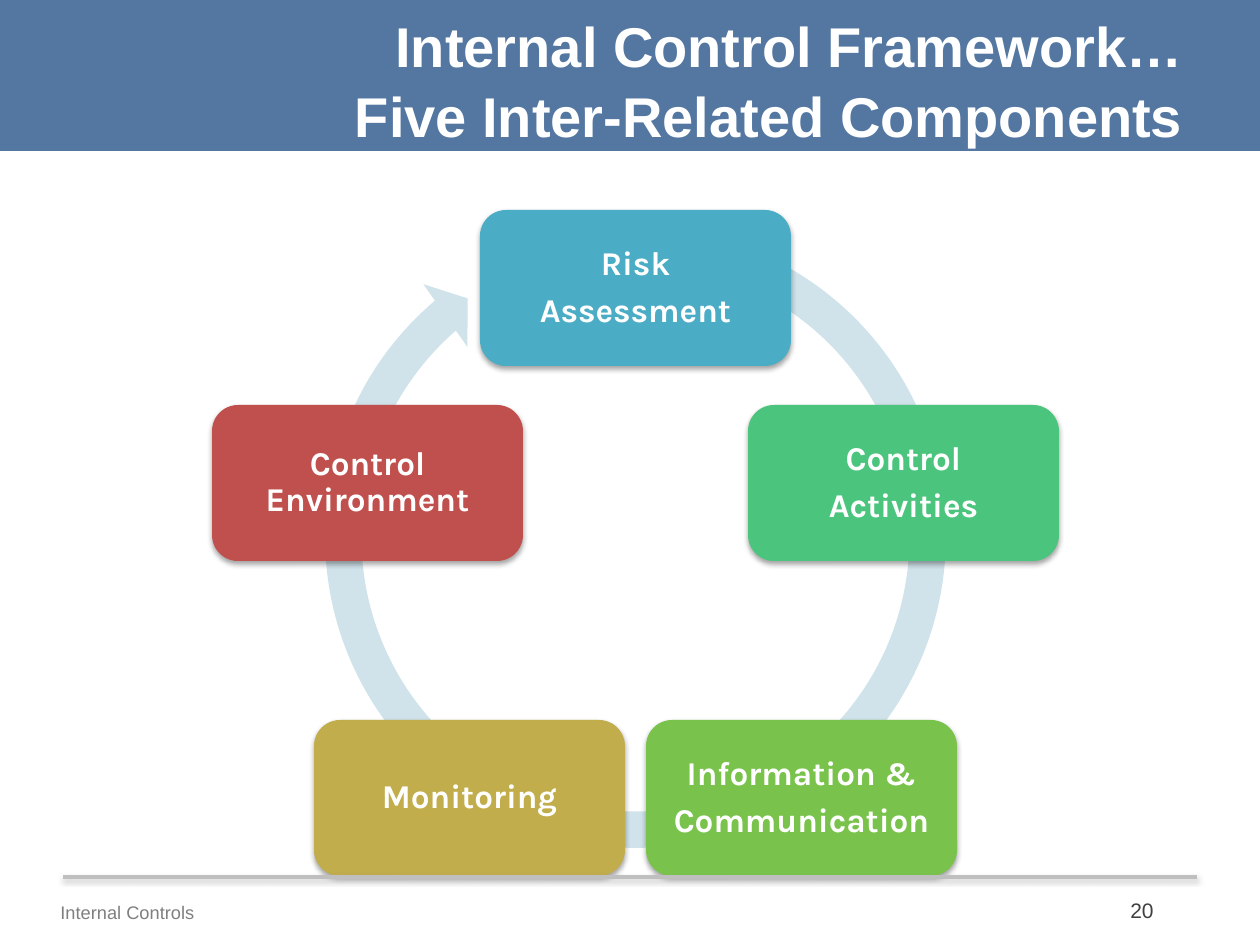
"""Build the slide on the five inter-related components of internal control."""
import dataclasses
import math
import typing

import lxml.etree
import pptx
import pptx.dml.color
import pptx.enum.shapes
import pptx.enum.text
import pptx.oxml.ns
import pptx.util

RGB = pptx.dml.color.RGBColor
SHAPE = pptx.enum.shapes.MSO_SHAPE
ALIGN = pptx.enum.text.PP_ALIGN
ANCHOR = pptx.enum.text.MSO_ANCHOR
qn = pptx.oxml.ns.qn

WHITE = RGB(0xFF, 0xFF, 0xFF)
BLACK = RGB(0x00, 0x00, 0x00)
NAVY = RGB(0x37, 0x60, 0x92)
PALE_BLUE = RGB(0xD0, 0xE3, 0xEA)
TEAL = RGB(0x4B, 0xAC, 0xC6)
MINT = RGB(0x4B, 0xC5, 0x7E)
GREEN = RGB(0x79, 0xC3, 0x4C)
GOLD = RGB(0xC2, 0xAD, 0x4C)
RED = RGB(0xC0, 0x50, 0x4D)
RULE_GREY = RGB(0xBF, 0xBF, 0xBF)
SHADOW_GREY = RGB(0x80, 0x80, 0x80)
NUMBER_GREY = RGB(0x40, 0x40, 0x40)
FOOTER_GREY = RGB(0x7F, 0x7F, 0x7F)

EMU_PER_PX = 914400 / 126
CENTRE_X, CENTRE_Y, RADIUS = 635, 570, 282
BOX_W, BOX_H = 311, 156
ARROW_ADJUSTMENTS = (0.055, 3.307, 137.652, 173.925, 0.058)


@dataclasses.dataclass
class Component:
    lines: tuple[str, ...]
    color: RGB


@dataclasses.dataclass
class Label:
    text: str
    box: tuple[int, int, int, int]
    color: RGB
    font: dict[str, typing.Any]
    paragraph: dict[str, typing.Any] = dataclasses.field(default_factory=dict)
    frame: dict[str, typing.Any] = dataclasses.field(default_factory=dict)


COMPONENTS = (
    Component(("Risk", "Assessment"), TEAL),
    Component(("Control", "Activities"), MINT),
    Component(("Information &", "Communication"), GREEN),
    Component(("Monitoring",), GOLD),
    Component(("Control Environment",), RED),
)


def px(value: float) -> int:
    return round(value * EMU_PER_PX)


def apply(target: typing.Any, values: dict[str, typing.Any]) -> None:
    for name, value in values.items():
        setattr(target, name, value)


BOX_FRAME = {
    "word_wrap": True, "vertical_anchor": ANCHOR.MIDDLE,
    "margin_left": px(18), "margin_right": px(18),
    "margin_top": px(18), "margin_bottom": px(18),
}
BOX_PARAGRAPH = {
    "alignment": ALIGN.CENTER, "line_spacing": 0.9, "space_after": pptx.util.Pt(6.5),
}
BOX_FONT = {"name": "Karla", "size": pptx.util.Pt(19), "bold": True}

TITLE = Label(
    "Internal Control Framework…\vFive Inter-Related Components",
    (156, 0, 1040, 158), WHITE,
    {"name": "Arial", "size": pptx.util.Pt(32), "bold": True},
    {"alignment": ALIGN.RIGHT, "line_spacing": 1.04},
    {"margin_top": px(9)},
)
NUMBER = Label(
    "20", (872, 885, 294, 50), NUMBER_GREY,
    {"name": "Arial", "size": pptx.util.Pt(12)},
    {"alignment": ALIGN.RIGHT},
    {"vertical_anchor": ANCHOR.MIDDLE},
)
FOOTER = Label(
    "Internal Controls", (48, 891, 711, 38), FOOTER_GREY,
    {"name": "Arial", "size": pptx.util.Pt(18)},
)


def add_shadow(sp: typing.Any, color: RGB, alpha: int, distance: float) -> None:
    props = sp._element.spPr
    effects = props.find(qn("a:effectLst"))
    if effects is None:
        effects = lxml.etree.SubElement(props, qn("a:effectLst"))
    shadow = lxml.etree.SubElement(
        effects, qn("a:outerShdw"), blurRad=str(pptx.util.Pt(3.1)),
        dist=str(pptx.util.Pt(distance)), dir="5400000", rotWithShape="0")
    clr = lxml.etree.SubElement(shadow, qn("a:srgbClr"), val=str(color))
    lxml.etree.SubElement(clr, qn("a:alpha"), val=str(alpha * 1000))


def add_filled(s: typing.Any, kind: SHAPE, box: tuple[int, int, int, int], color: RGB) -> typing.Any:
    sp = s.shapes.add_shape(kind, *map(px, box))
    sp.shadow.inherit = False
    sp.fill.solid()
    sp.fill.fore_color.rgb = color
    sp.line.fill.background()
    return sp


def write(p: typing.Any, text: str, color: RGB, font: dict, paragraph: dict) -> None:
    p.text = text
    apply(p, paragraph)
    for r in p.runs:
        apply(r.font, font)
        r.font.color.rgb = color


def add_label(s: typing.Any, label: Label) -> typing.Any:
    sp = s.shapes.add_textbox(*map(px, label.box))
    tf = sp.text_frame
    apply(tf, {"word_wrap": True, **label.frame})
    write(tf.paragraphs[0], label.text, label.color, label.font, label.paragraph)
    return sp


def add_band(s: typing.Any) -> None:
    sp = add_filled(s, SHAPE.RECTANGLE, (-1, 0, 1261, 151), NAVY)
    clr = sp._element.spPr.find(qn("a:solidFill")).find(qn("a:srgbClr"))
    lxml.etree.SubElement(clr, qn("a:alpha"), val="85000")


def add_cycle_arrow(s: typing.Any) -> None:
    sp = add_filled(s, SHAPE.CIRCULAR_ARROW, (305, 207, 661, 661), PALE_BLUE)
    for i, value in enumerate(ARROW_ADJUSTMENTS):
        sp.adjustments[i] = value


def add_component(s: typing.Any, component: Component, index: int) -> None:
    angle = math.tau * index / len(COMPONENTS)
    left = round(CENTRE_X + RADIUS * math.sin(angle)) - BOX_W // 2
    top = round(CENTRE_Y - RADIUS * math.cos(angle)) - BOX_H // 2
    sp = add_filled(s, SHAPE.ROUNDED_RECTANGLE, (left, top, BOX_W, BOX_H), component.color)
    add_shadow(sp, BLACK, 35, 1.8)
    tf = sp.text_frame
    apply(tf, BOX_FRAME)
    for i, line in enumerate(component.lines):
        p = tf.add_paragraph() if i else tf.paragraphs[0]
        write(p, line, WHITE, BOX_FONT, BOX_PARAGRAPH)


def add_footer_rule(s: typing.Any) -> None:
    line = s.shapes.add_connector(
        pptx.enum.shapes.MSO_CONNECTOR.STRAIGHT, *map(px, (63, 877, 1197, 877)))
    line.line.color.rgb = RULE_GREY
    line.line.width = pptx.util.Pt(2)
    add_shadow(line, SHADOW_GREY, 38, 1.6)


def main() -> None:
    prs = pptx.Presentation()
    prs.slide_width, prs.slide_height = px(1260), px(945)
    s = prs.slides.add_slide(prs.slide_layouts[6])
    add_band(s)
    add_label(s, TITLE)
    add_cycle_arrow(s)
    for index, component in enumerate(COMPONENTS):
        add_component(s, component, index)
    add_label(s, NUMBER)
    add_footer_rule(s)
    footer = add_label(s, FOOTER)
    footer.text_frame.paragraphs[0].runs[0].font._element.set("baseline", "30000")
    prs.save("out.pptx")


if __name__ == "__main__":
    main()
